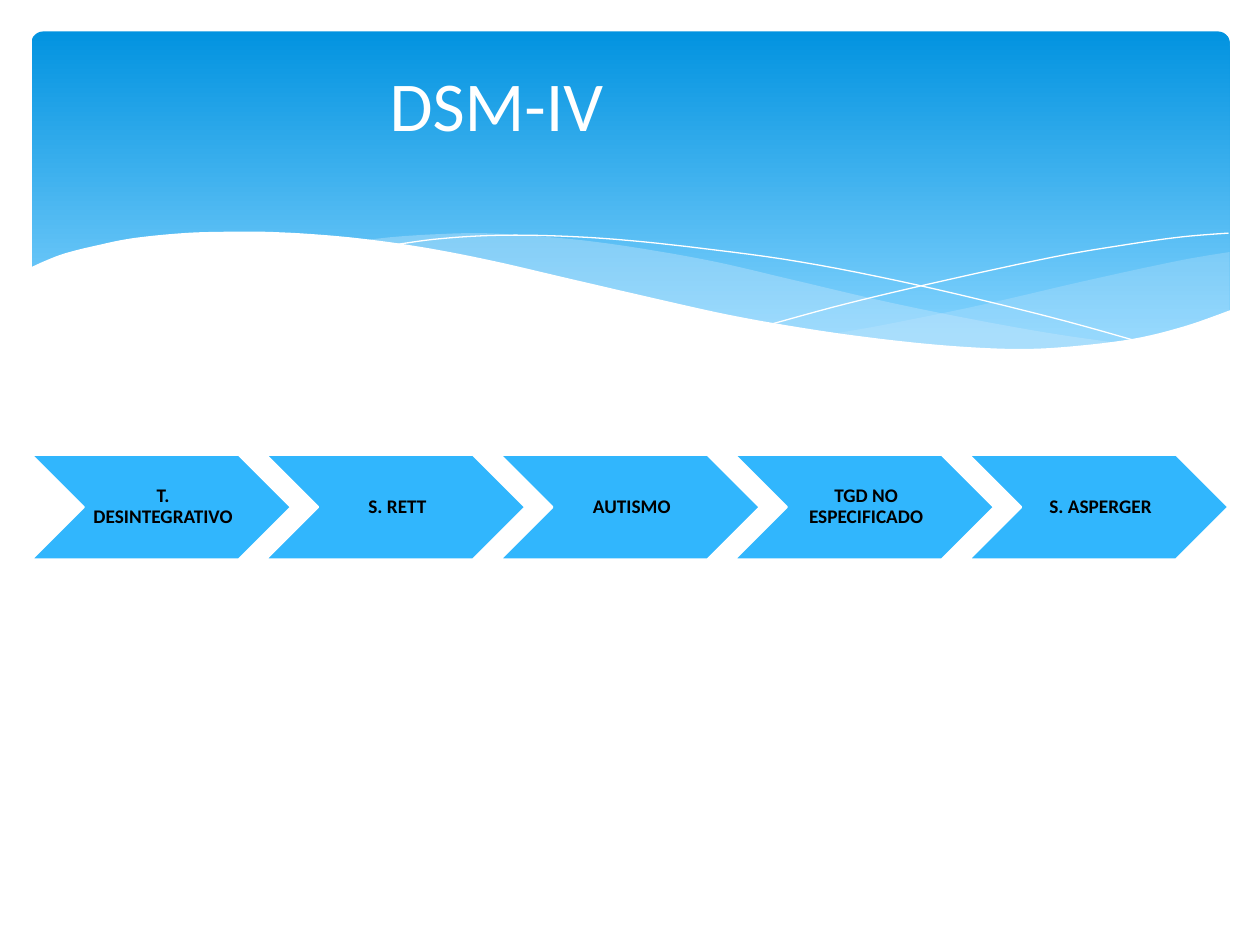
from lxml.etree import SubElement
from pptx import Presentation
from pptx.dml.color import RGBColor as RGB
from pptx.enum.shapes import MSO_SHAPE as SHAPE
from pptx.enum.text import MSO_ANCHOR as ANCHOR, PP_ALIGN as ALIGN
from pptx.oxml.ns import qn
from pptx.util import Inches, Pt

COLORS = {"deep": "0293E0", "light": "83D3FE", "pale": "C6E7FC",
          "step": "31B6FD", "white": "FFFFFF", "black": "000000"}


def smooth_curve(knots, steps=6):
    """Points of a Catmull-Rom curve through the knots."""
    padded = [knots[0], *knots, knots[-1]]
    points = [knots[0]]
    for a, b, c, d in zip(padded, padded[1:], padded[2:], padded[3:]):
        for step in range(1, steps + 1):
            t = step / steps
            points.append(tuple(
                (2 * q + (r - p) * t + (2 * p - 5 * q + 4 * r - s) * t ** 2
                 + (3 * q - p - 3 * r + s) * t ** 3) / 2
                for p, q, r, s in zip(a, b, c, d)))
    return points


class SlideBuilder:
    font = "Calibri"

    def __init__(self, slide):
        self.shapes = slide.shapes

    def color(self, name):
        return RGB.from_string(COLORS[name])

    def paint(self, shape, fill=None, line=None, width=0, alpha=None):
        shape.shadow.inherit = False
        if fill:
            shape.fill.solid()
            shape.fill.fore_color.rgb = self.color(fill)
        else:
            shape.fill.background()
        if alpha:
            tint = shape.fill._xPr.find(qn("a:solidFill"))[0]
            SubElement(tint, qn("a:alpha"), val=str(alpha * 1000))
        if line:
            shape.line.color.rgb = self.color(line)
            shape.line.width = Pt(width)
        else:
            shape.line.fill.background()

    def preset(self, kind, place, **style):
        shape = self.shapes.add_shape(kind, *map(Inches, place))
        self.paint(shape, **style)
        return shape

    def banner(self, place, top, bottom):
        panel = self.preset(SHAPE.ROUNDED_RECTANGLE, place)
        panel.adjustments[0] = 0.034
        panel.fill.gradient()
        panel.fill.gradient_angle = 270
        for stop, position, name in zip(panel.fill.gradient_stops, (0, 0.9), (top, bottom)):
            stop.position = position
            stop.color.rgb = self.color(name)

    def wave(self, curves, closed=True, **style):
        points = [(Inches(x), Inches(y))
                  for knots in curves for x, y in smooth_curve(knots)]
        outline = self.shapes.build_freeform(*points[0])
        outline.add_line_segments(points[1:], close=closed)
        self.paint(outline.convert_to_shape(), **style)

    def text(self, place, words, size, color, bold=False, spacing=1.0, insets=None):
        frame = self.shapes.add_textbox(*map(Inches, place)).text_frame
        frame.word_wrap = True
        frame.vertical_anchor = ANCHOR.MIDDLE
        for side, inset in (insets or {}).items():
            setattr(frame, f"margin_{side}", Inches(inset))
        para = frame.paragraphs[0]
        para.alignment = ALIGN.CENTER
        para.line_spacing = spacing
        span = para.add_run()
        span.text = words
        for name, value in {"name": self.font, "size": Pt(size), "bold": bold}.items():
            setattr(span.font, name, value)
        span.font.color.rgb = self.color(color)


RIGHT_WAVE = [
    [(9.76, 2), (9.35, 2.07), (8.61, 2.23), (7.79, 2.42), (7.06, 2.57), (6.61, 2.65)],
    [(6.61, 2.65), (7.05, 2.71), (7.57, 2.76), (8.03, 2.78), (8.54, 2.76),
     (8.97, 2.7), (9.35, 2.62), (9.76, 2.47)],
]
MIDDLE_WAVE = [
    [(8.93, 2.73), (8.37, 2.65), (7.75, 2.54), (7.06, 2.4), (6.29, 2.22),
     (5.69, 2.08), (5.14, 1.98), (4.65, 1.91), (4.2, 1.87), (3.8, 1.85),
     (3.44, 1.86), (3.13, 1.88), (2.86, 1.91)],
    [(2.86, 1.91), (3.42, 1.99), (4.04, 2.11), (4.49, 2.22), (5.3, 2.4),
     (6.01, 2.55), (6.65, 2.66), (7.22, 2.74), (7.73, 2.77), (8.18, 2.78),
     (8.57, 2.77), (8.93, 2.73)],
]
FALLING_LINE = [(3.09, 1.95), (3.44, 1.9), (3.87, 1.87), (4.33, 1.87), (4.89, 1.9),
                (5.56, 1.97), (6.36, 2.08), (7.27, 2.26), (8.31, 2.51), (9.07, 2.72)]
RISING_LINE = [(6.13, 2.57), (6.72, 2.41), (7.48, 2.23), (8.36, 2.04),
               (8.95, 1.94), (9.38, 1.88), (9.75, 1.85)]
WHITE_WAVE = [
    [(9.77, 2.46), (9.4, 2.59), (8.99, 2.69), (8.5, 2.75), (8.09, 2.77), (7.61, 2.75),
     (7.08, 2.7), (6.48, 2.62), (5.79, 2.5), (5.03, 2.33), (4.47, 2.2), (3.91, 2.07),
     (3.4, 1.97), (2.92, 1.9), (2.5, 1.86), (2.11, 1.84), (1.77, 1.84), (1.46, 1.85),
     (1.06, 1.89), (0.76, 1.95), (0.52, 2.01), (0.36, 2.07), (0.23, 2.13)],
    [(0.23, 3.29)],
    [(9.77, 3.29)],
]
DISORDERS = ["T. DESINTEGRATIVO", "S. RETT", "AUTISMO", "TGD NO ESPECIFICADO", "S. ASPERGER"]


def main():
    deck = Presentation()
    deck.slide_width, deck.slide_height = Inches(10), Inches(7.5)
    page = SlideBuilder(deck.slides.add_slide(deck.slide_layouts[6]))

    # Banner with waves
    page.banner((0.25, 0.25, 9.51, 2.7), "deep", "light")
    page.wave(RIGHT_WAVE, fill="pale", alpha=29)
    page.wave(MIDDLE_WAVE, fill="pale", alpha=40)
    for line in (FALLING_LINE, RISING_LINE):
        page.wave([line], closed=False, line="white")
    page.wave(WHITE_WAVE, fill="white")

    # Row of chevrons
    top, width, height, pitch = 3.61, 2.06, 0.83, 1.86
    insets = {"left": 0.05, "top": 0.02, "right": 0.02, "bottom": 0.02}
    for index, disorder in enumerate(DISORDERS):
        left = 0.25 + index * pitch
        page.preset(SHAPE.CHEVRON, (left, top, width, height),
                    fill="step", line="white", width=1.25)
        page.text((left + height / 2, top, width - height, height), disorder, 11, "black",
                  bold=True, spacing=0.9, insets=insets)

    # Title
    page.text((0.83, 0.36, 6.22, 0.92), "DSM-IV", 40, "white")
    deck.save("out.pptx")


if __name__ == "__main__":
    main()
